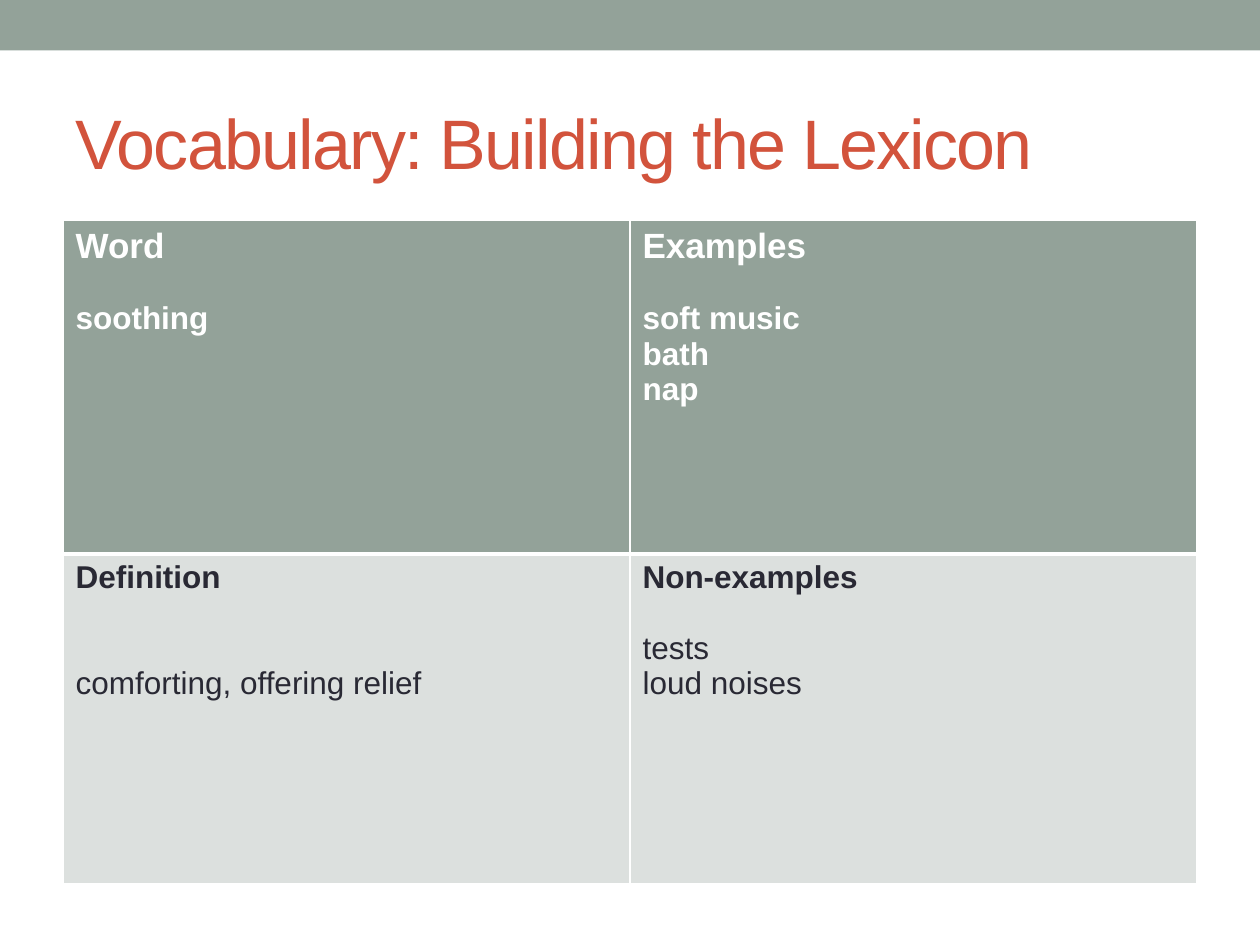
from dataclasses import dataclass

from lxml import etree
from pptx import Presentation
from pptx.dml.color import RGBColor
from pptx.enum import shapes, text
from pptx.oxml import ns
from pptx.util import Pt

SAGE = RGBColor(0x93, 0xA2, 0x99)
PALE = RGBColor(0xDC, 0xE0, 0xDE)
RUST = RGBColor(0xD2, 0x53, 0x3C)
INK = RGBColor(0x29, 0x29, 0x34)
WHITE = RGBColor(0xFF, 0xFF, 0xFF)
FONT = "Arial"
LINE = 20.25  # height of one line of body text


@dataclass(frozen=True)
class Quadrant:
    heading: str
    lines: tuple[str, ...]
    gap_lines: int = 1


@dataclass(frozen=True)
class RowStyle:
    height: float
    fill: RGBColor
    color: RGBColor
    heading_size: float
    body_bold: bool
    top_border: float
    bottom_border: float


QUADRANTS = (
    (Quadrant("Word", ("soothing",)),
     Quadrant("Examples", ("soft music", "bath", "nap"))),
    (Quadrant("Definition", ("comforting, offering relief",), gap_lines=2),
     Quadrant("Non-examples", ("tests", "loud noises"))),
)
ROW_STYLES = (
    RowStyle(190.5, SAGE, WHITE, 20, True, 1, 3),
    RowStyle(188.5, PALE, INK, 18, False, 3, 1),
)


def format_run(r, size: float, color: RGBColor, bold: bool = False) -> None:
    r.font.name = FONT
    r.font.size = Pt(size)
    r.font.bold = bold
    r.font.color.rgb = color


def add_border(cell, side: str, width: float) -> None:
    """Add a white border; side is L, R, T or B, called in that order."""
    tc_pr = cell._tc.get_or_add_tcPr()
    ln = etree.SubElement(tc_pr, ns.qn(f"a:ln{side}"), w=str(Pt(width)))
    fill = etree.SubElement(ln, ns.qn("a:solidFill"))
    etree.SubElement(fill, ns.qn("a:srgbClr"), val=str(WHITE))


def fill_cell(cell, quadrant: Quadrant, style: RowStyle) -> None:
    widths = {"L": 1, "R": 1, "T": style.top_border, "B": style.bottom_border}
    for side, width in widths.items():
        add_border(cell, side, width)
    cell.fill.solid()
    cell.fill.fore_color.rgb = style.fill

    tf = cell.text_frame
    tf.text = "\n".join((quadrant.heading, *quadrant.lines))
    heading, *body = tf.paragraphs
    format_run(heading.runs[0], style.heading_size, style.color, True)
    for p in body:
        format_run(p.runs[0], 18, style.color, style.body_bold)
    body[0].space_before = Pt(quadrant.gap_lines * LINE)


def add_band(s) -> None:
    sp = s.shapes.add_shape(shapes.MSO_SHAPE.RECTANGLE, 0, 0, Pt(720), Pt(28.8))
    sp.shadow.inherit = False
    sp.fill.solid()
    sp.fill.fore_color.rgb = SAGE
    sp.line.fill.background()


def set_title(s, title: str) -> None:
    sp = s.shapes.title
    sp.left, sp.top, sp.width, sp.height = Pt(36), Pt(41.75), Pt(648), Pt(77.75)
    tf = sp.text_frame
    tf.text = title
    tf.auto_size = text.MSO_AUTO_SIZE.NONE
    tf.vertical_anchor = text.MSO_ANCHOR.MIDDLE
    p = tf.paragraphs[0]
    p.alignment = text.PP_ALIGN.LEFT
    r = p.runs[0]
    format_run(r, 40, RUST)
    r.font._element.set("spc", "-100")


def add_vocabulary_table(s) -> None:
    height = sum(style.height for style in ROW_STYLES)
    table = s.shapes.add_table(
        len(QUADRANTS), 2, Pt(36), Pt(126), Pt(648), Pt(height)).table
    for row, style, quadrants in zip(table.rows, ROW_STYLES, QUADRANTS):
        row.height = Pt(style.height)
        for cell, quadrant in zip(row.cells, quadrants):
            fill_cell(cell, quadrant, style)


def main() -> None:
    prs = Presentation()
    prs.slide_width, prs.slide_height = Pt(720), Pt(540)
    s = prs.slides.add_slide(prs.slide_layouts[5])
    add_band(s)
    set_title(s, "Vocabulary: Building the Lexicon")
    add_vocabulary_table(s)
    prs.save("out.pptx")


if __name__ == "__main__":
    main()
